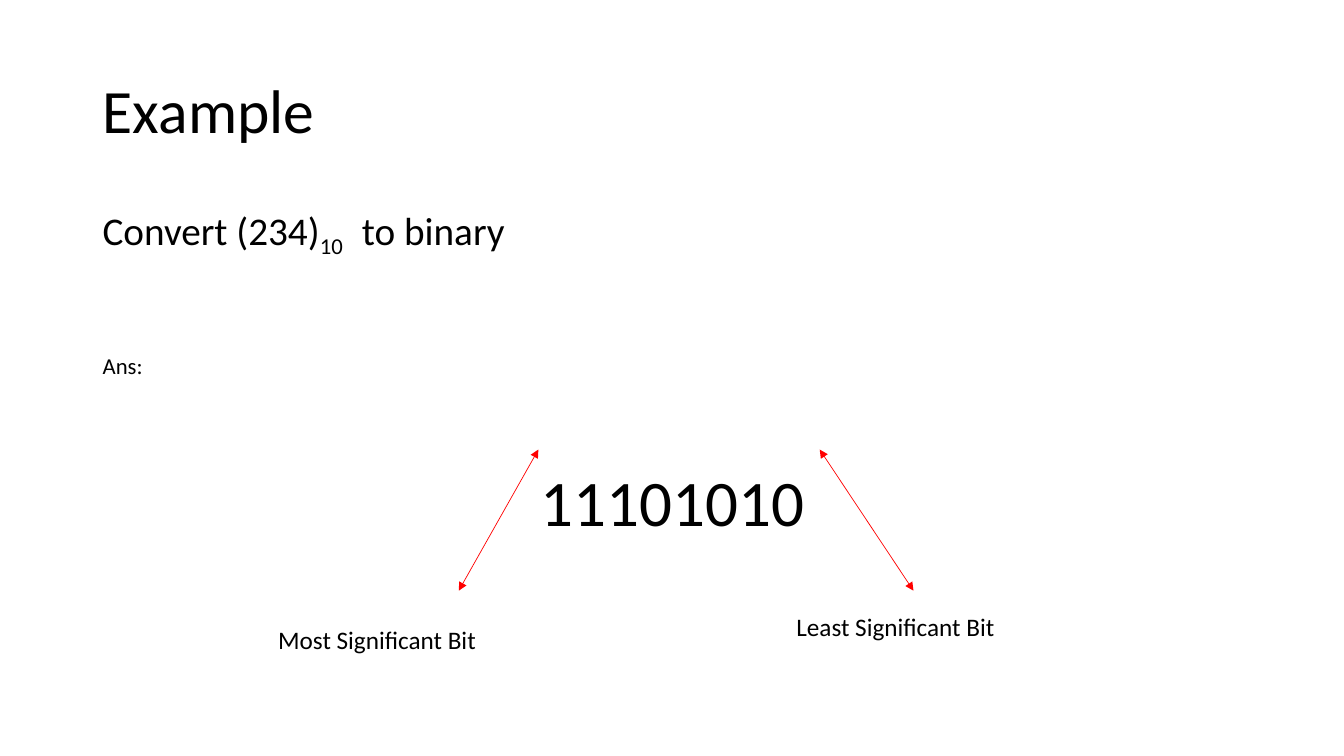
from pptx import Presentation
from pptx.dml.color import RGBColor
from pptx.enum.shapes import MSO_CONNECTOR
from pptx.enum.text import MSO_ANCHOR, PP_ALIGN
from pptx.oxml.ns import qn
from pptx.util import Inches, Pt
from lxml.etree import SubElement


def color(hex_string):
    return RGBColor.from_string(hex_string)


def add_text(paragraph, text, size=28, baseline=0, align=PP_ALIGN.LEFT,
             line_spacing=0.9, space_before=10):
    paragraph.alignment = align
    paragraph.line_spacing = line_spacing
    paragraph.space_before = Pt(space_before)
    run = paragraph.add_run()
    run.text = text
    run.font.name = "Calibri"
    run.font.size = Pt(size)
    run.font.color.rgb = color("000000")
    if baseline:
        run.font._element.set("baseline", str(baseline * 1000))


presentation = Presentation()
presentation.slide_width = Inches(13.33)
presentation.slide_height = Inches(7.5)
slide = presentation.slides.add_slide(presentation.slide_layouts[5])
margin, content_width = Inches(0.92), Inches(11.5)

# Title
title = slide.shapes.title
title.left, title.top = margin, Inches(0.4)
title.width, title.height = content_width, Inches(1.45)
title.text_frame.vertical_anchor = MSO_ANCHOR.MIDDLE
add_text(title.text_frame.paragraphs[0], "Example", size=44, space_before=0)

# Question and answer
body = slide.shapes.add_textbox(margin, Inches(2), content_width, Inches(4.76))
body_frame = body.text_frame
body_frame.word_wrap = True
question = body_frame.paragraphs[0]
add_text(question, "Convert (234)")
add_text(question, "10  ", baseline=-25)
add_text(question, " to binary")
add_text(body_frame.add_paragraph(), "Ans:", baseline=-25, space_before=50.7)
add_text(body_frame.add_paragraph(), "11101010", size=80, baseline=-25,
         align=PP_ALIGN.CENTER)

# Double-headed arrows from the outer bits towards their labels
arrow_top, arrow_bottom = Inches(4.46), Inches(5.86)
for bit_x, label_x in [(8.13, 9.06), (5.34, 4.55)]:
    arrow = slide.shapes.add_connector(
        MSO_CONNECTOR.STRAIGHT, Inches(bit_x), arrow_top, Inches(label_x), arrow_bottom)
    arrow.line.color.rgb = color("FF0000")
    arrow.line.width = Pt(0.5)
    for end in ("a:headEnd", "a:tailEnd"):
        SubElement(arrow.line._get_or_add_ln(), qn(end), type="triangle")
    SubElement(arrow._element.spPr, qn("a:effectLst"))

# Bit labels
for label, left, top in [("Most Significant Bit", 2.66, 6.14),
                         ("Least Significant Bit", 7.8, 6.02)]:
    label_box = slide.shapes.add_textbox(Inches(left), Inches(top), Inches(2.21), Inches(0.4))
    label_box.text_frame.word_wrap = True
    add_text(label_box.text_frame.paragraphs[0], label, size=18,
             line_spacing=1.0, space_before=0)

presentation.save("out.pptx")
